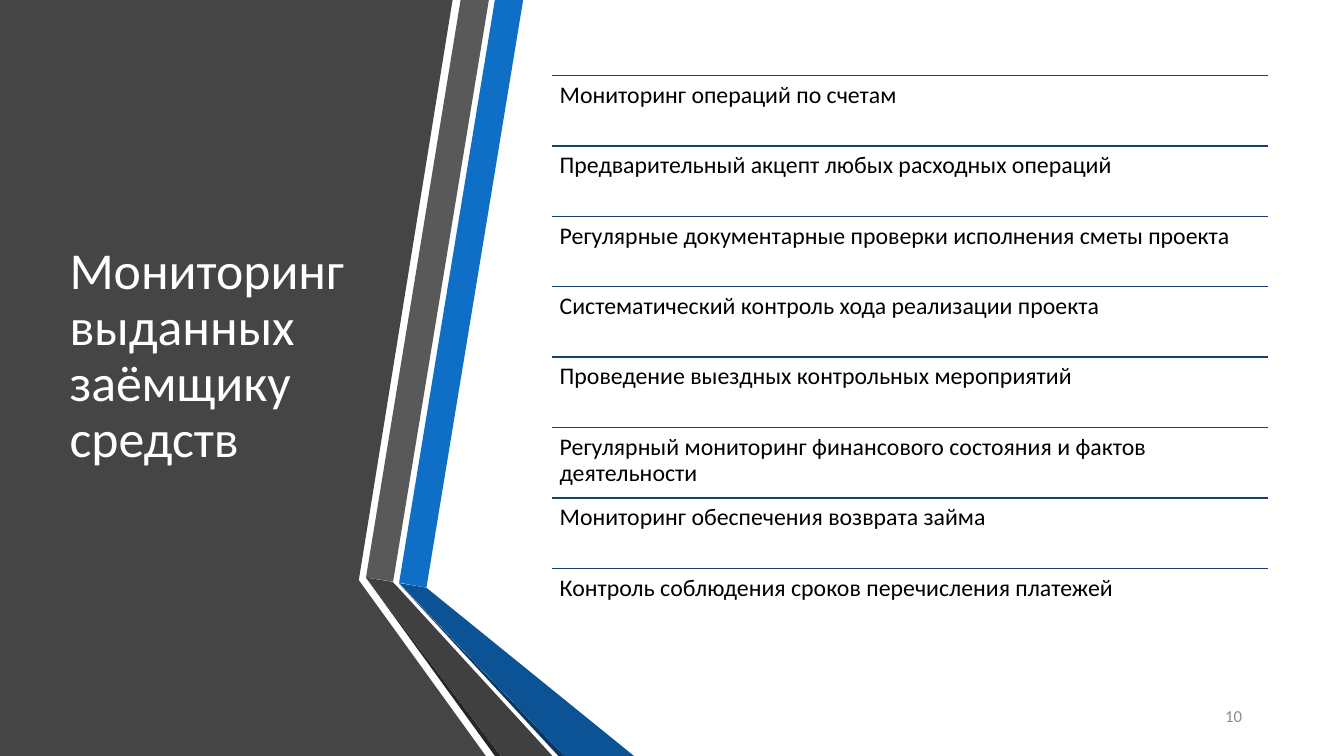
import pptx
import pptx.util
import pptx.dml.color
import pptx.enum.text
import pptx.enum.shapes
import pptx.oxml

Pt = pptx.util.Pt
RGB = pptx.dml.color.RGBColor
ALIGN = pptx.enum.text.PP_ALIGN
ANCHOR = pptx.enum.text.MSO_ANCHOR

PANEL = RGB(0x45, 0x45, 0x45)
BLUE = RGB(0x0F, 0x6F, 0xC6)
GREY = RGB(0x59, 0x59, 0x59)
BLACK = RGB(0x26, 0x26, 0x26)
NAVY = RGB(0x08, 0x37, 0x63)
DEEP = RGB(0x0B, 0x53, 0x94)
DARK = RGB(0x40, 0x40, 0x40)
RULE = RGB(0x17, 0x40, 0x6D)
PALE = RGB(0x8C, 0x8C, 0x8C)
WHITE = RGB(0xFF, 0xFF, 0xFF)
INK = RGB(0, 0, 0)

TITLE = "Мониторинг выданных заёмщику средств"
NUMBER = "10"
ITEMS = [
    "Мониторинг операций по счетам",
    "Предварительный акцепт любых расходных операций",
    "Регулярные документарные проверки исполнения сметы проекта",
    "Систематический контроль хода реализации проекта",
    "Проведение выездных контрольных мероприятий",
    "Регулярный мониторинг финансового состояния и фактов деятельности",
    "Мониторинг обеспечения возврата займа",
    "Контроль соблюдения сроков перечисления платежей",
]

WIDE, HIGH = 960, 540
BANDS = [
    (PANEL, [(0, 0), (323.3, 0), (256.3, 414.4), (347, HIGH), (0, HIGH)]),
    (BLUE, [(285.1, 416.2), (304.6, 419.8), (373.7, 0), (353.5, 0)]),
    (GREY, [(349.2, 0), (329, 0), (261.4, 412.6), (280.8, 415.4)]),
    (BLACK, [(261.4, 412.6), (353.5, HIGH), (357.8, HIGH)]),
    (NAVY, [(285.1, 416.9), (398.9, HIGH), (403.2, HIGH)]),
    (DEEP, [(285.1, 416.5), (403.2, HIGH), (452.9, HIGH), (304.6, 419.8)]),
    (DARK, [(394.6, HIGH), (284.4, 419.8), (280.4, 415.6),
            (261.4, 412.6), (357.8, HIGH)]),
]
LEFT, TOP, SPAN, STEP = 394.6, 54, 511.2, 50.27
PAD = 5.2


def write(shape, text, size, color, align=ALIGN.LEFT, anchor=ANCHOR.TOP,
          space=1, pad=None):
    frame = shape.text_frame
    frame.word_wrap = True
    frame.auto_size = pptx.enum.text.MSO_AUTO_SIZE.NONE
    frame.vertical_anchor = anchor
    if pad is not None:
        frame.margin_left = frame.margin_right = Pt(pad)
        frame.margin_top = frame.margin_bottom = Pt(pad)
    para = frame.paragraphs[0]
    para.alignment = align
    para.line_spacing = space
    run = para.add_run()
    run.text = text
    run.font.name = "Calibri"
    run.font.size = Pt(size)
    run.font.color.rgb = color


def band(shapes, color, points):
    spots = [(Pt(x), Pt(y)) for x, y in points]
    path = shapes.build_freeform(*spots[0], scale=1)
    path.add_line_segments(spots[1:], close=True)
    shape = path.convert_to_shape()
    shape.shadow.inherit = False
    shape.fill.solid()
    shape.fill.fore_color.rgb = color
    shape.line.fill.background()


def rule(shapes, y):
    line = shapes.add_connector(
        pptx.enum.shapes.MSO_CONNECTOR.STRAIGHT,
        Pt(LEFT), Pt(y), Pt(LEFT + SPAN), Pt(y))
    line.line.color.rgb = RULE
    line.line.width = Pt(1)
    props = line.element.spPr
    props.append(pptx.oxml.parse_xml(
        '<a:effectLst xmlns:a='
        '"http://schemas.openxmlformats.org/drawingml/2006/main"/>'))


def main():
    deck = pptx.Presentation()
    deck.slide_width, deck.slide_height = Pt(WIDE), Pt(HIGH)
    slide = deck.slides.add_slide(deck.slide_layouts[5])
    shapes = slide.shapes

    for color, points in BANDS:
        band(shapes, color, points)

    title = shapes.title
    title.left, title.top = Pt(42.5), Pt(54)
    title.width, title.height = Pt(218.9), Pt(401.8)
    write(title, TITLE, 37, WHITE, anchor=ANCHOR.MIDDLE, space=0.9)
    title.element.getparent().append(title.element)

    box = shapes.add_textbox(Pt(808.6), Pt(496.8), Pt(85.7), Pt(28.8))
    write(box, NUMBER, 12, PALE, align=ALIGN.RIGHT, anchor=ANCHOR.MIDDLE)

    for index, item in enumerate(ITEMS):
        y = TOP + index * STEP
        rule(shapes, y)
        box = shapes.add_textbox(Pt(LEFT), Pt(y), Pt(SPAN), Pt(STEP))
        write(box, item, 17, INK, space=0.9, pad=PAD)

    deck.save("out.pptx")


if __name__ == "__main__":
    main()
